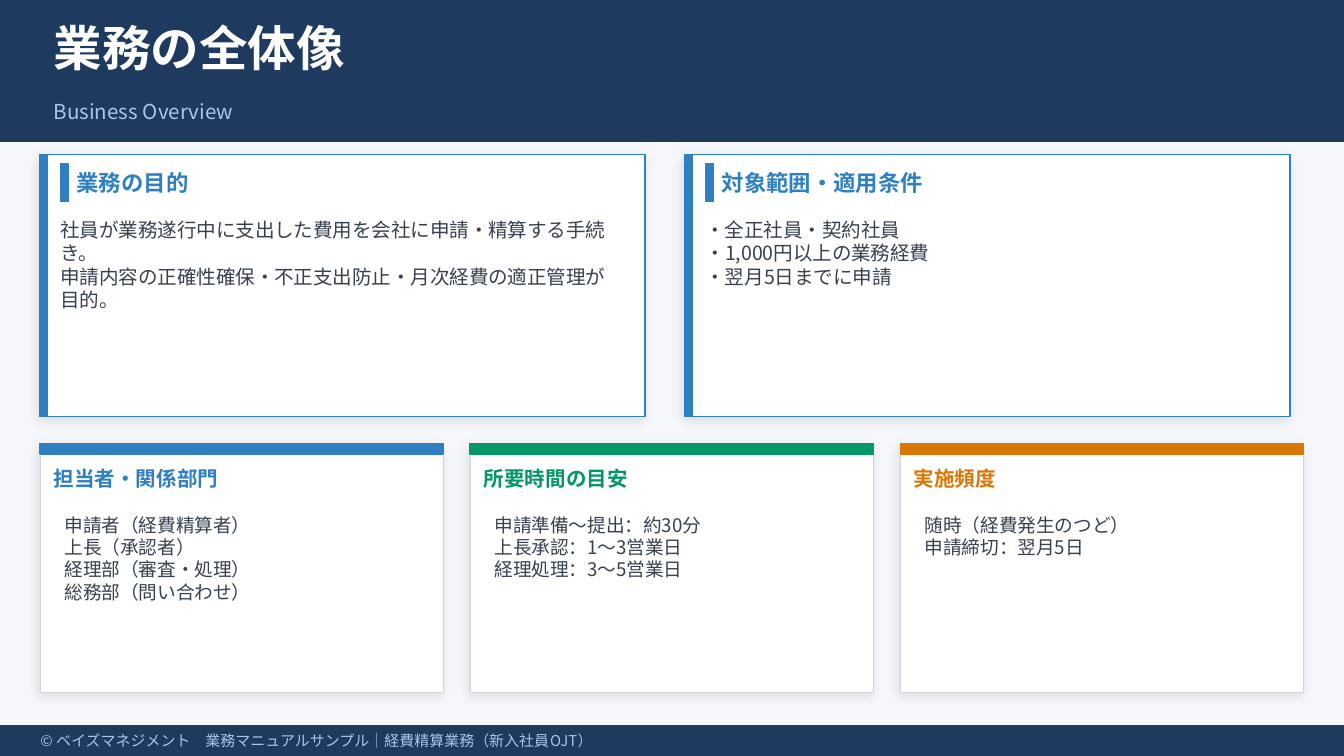
from dataclasses import dataclass

from lxml import etree
from pptx import Presentation
from pptx.dml.color import RGBColor
from pptx.enum.shapes import MSO_SHAPE
from pptx.enum.text import MSO_ANCHOR, MSO_AUTO_SIZE, PP_ALIGN
from pptx.oxml.ns import qn
from pptx.util import Inches, Pt

RECTANGLE = MSO_SHAPE.RECTANGLE
TOP, MIDDLE = MSO_ANCHOR.TOP, MSO_ANCHOR.MIDDLE
LEFT = PP_ALIGN.LEFT
NO_AUTOSIZE = MSO_AUTO_SIZE.NONE
TITLE_ONLY = 5


@dataclass(frozen=True)
class Theme:
    font: str = "Noto Sans CJK JP"
    background: str = "F5F7FA"
    navy: str = "1E3A5F"
    pale_blue: str = "A8C8E8"
    white: str = "FFFFFF"
    blue: str = "2F7FC1"
    green: str = "059669"
    orange: str = "D97706"
    border: str = "D1D5DB"
    body: str = "374151"
    title_size: float = 26
    subtitle_size: float = 11
    panel_heading_size: float = 12
    panel_body_size: float = 10.5
    card_heading_size: float = 11
    card_body_size: float = 10
    footer_size: float = 8


THEME = Theme()

PANELS = [
    ("業務の目的", [
        "社員が業務遂行中に支出した費用を会社に申請・精算する手続き。",
        "申請内容の正確性確保・不正支出防止・月次経費の適正管理が目的。",
    ]),
    ("対象範囲・適用条件", [
        "・全正社員・契約社員",
        "・1,000円以上の業務経費",
        "・翌月5日までに申請",
    ]),
]
CARDS = [
    ("担当者・関係部門", THEME.blue, [
        "申請者（経費精算者）",
        "上長（承認者）",
        "経理部（審査・処理）",
        "総務部（問い合わせ）",
    ]),
    ("所要時間の目安", THEME.green, [
        "申請準備〜提出：約30分",
        "上長承認：1〜3営業日",
        "経理処理：3〜5営業日",
    ]),
    ("実施頻度", THEME.orange, [
        "随時（経費発生のつど）",
        "申請締切：翌月5日",
    ]),
]


def add_block(page, box, fill, line=None, line_width=1):
    block = page.shapes.add_shape(RECTANGLE, *map(Inches, box))
    block.shadow.inherit = False
    block.fill.solid()
    block.fill.fore_color.rgb = RGBColor.from_string(fill)
    block.line.color.rgb = RGBColor.from_string(line or fill)
    block.line.width = Pt(line_width)
    return block


def add_soft_shadow(block):
    effects = block._element.spPr.find(qn("a:effectLst"))
    shadow = etree.SubElement(effects, qn("a:outerShdw"), {
        "blurRad": str(Pt(6)), "dist": str(Pt(2)), "dir": str(135 * 60000),
        "algn": "bl", "rotWithShape": "0"})
    color = etree.SubElement(shadow, qn("a:srgbClr"), val="000000")
    etree.SubElement(color, qn("a:alpha"), val="10000")


def write_text(shape, lines, size, color, bold=False, anchor=MIDDLE,
               left_inset=0, top_inset=0):
    frame = shape.text_frame
    settings = {
        "word_wrap": True, "auto_size": NO_AUTOSIZE, "vertical_anchor": anchor,
        "margin_left": Inches(left_inset), "margin_top": Inches(top_inset),
        "margin_right": 0, "margin_bottom": 0,
    }
    for name, value in settings.items():
        setattr(frame, name, value)
    for index, line in enumerate(lines):
        para = frame.add_paragraph() if index else frame.paragraphs[0]
        para.alignment = LEFT
        span = para.add_run()
        span.text = line
        for name, value in {"name": THEME.font, "size": Pt(size), "bold": bold}.items():
            setattr(span.font, name, value)
        span.font.color.rgb = RGBColor.from_string(color)
        # Japanese glyphs take their typeface from the East Asian slot
        etree.SubElement(span._r.get_or_add_rPr(), qn("a:ea"), typeface=THEME.font)


def add_text(page, box, lines, size, color, **options):
    write_text(page.shapes.add_textbox(*map(Inches, box)), lines, size, color, **options)


def add_header(page, box):
    left, top, width, height = box
    add_block(page, box, THEME.navy)
    title = page.shapes.title
    page.shapes._spTree.append(title._element)  # bring above the band
    place = {"left": left + 0.4, "top": top + 0.05, "width": width - 2, "height": 0.6}
    for name, value in place.items():
        setattr(title, name, Inches(value))
    write_text(title, ["業務の全体像"], THEME.title_size, THEME.white, bold=True)
    add_text(page, (left + 0.4, top + 0.65, width - 2, 0.35), ["Business Overview"],
             THEME.subtitle_size, THEME.pale_blue)


def add_footer(page, box):
    left, top, width, height = box
    add_block(page, box, THEME.navy)
    add_text(page, (left + 0.3, top + 0.01, width - 0.6, 0.2),
             ["© ベイズマネジメント　業務マニュアルサンプル｜経費精算業務（新入社員OJT）"],
             THEME.footer_size, THEME.pale_blue)


def add_panel(page, box, heading, lines):
    """White panel with a blue left edge and a marker beside its heading."""
    left, top, width, height = box
    add_soft_shadow(add_block(page, box, THEME.white, THEME.blue))
    add_block(page, (left, top, 0.05, height), THEME.blue)
    add_block(page, (left + 0.15, top + 0.07, 0.06, 0.28), THEME.blue)
    add_text(page, (left + 0.27, top + 0.07, width - 0.4, 0.28), [heading],
             THEME.panel_heading_size, THEME.blue, bold=True)
    add_text(page, (left + 0.15, top + 0.41, width - 0.4, height - 0.6), lines,
             THEME.panel_body_size, THEME.body, anchor=TOP, top_inset=0.06)


def add_card(page, box, heading, accent, lines):
    """White card with a coloured strip along its top."""
    left, top, width, height = box
    add_soft_shadow(add_block(page, box, THEME.white, THEME.border, 0.5))
    add_block(page, (left, top, width, 0.08), accent)
    add_text(page, (left + 0.1, top + 0.12, width - 0.2, 0.28), [heading],
             THEME.card_heading_size, accent, bold=True)
    add_text(page, (left + 0.15, top + 0.46, width - 0.3, height - 0.57), lines,
             THEME.card_body_size, THEME.body, anchor=TOP, left_inset=0.03, top_inset=0.06)


def build_overview(deck):
    page = deck.slides.add_slide(deck.slide_layouts[TITLE_ONLY])
    page.background.fill.solid()
    page.background.fill.fore_color.rgb = RGBColor.from_string(THEME.background)
    add_header(page, (0, 0, 10, 1.05))
    add_footer(page, (0, 5.4, 10, 0.23))
    margin, panel_width, panel_gap = 0.3, 4.5, 0.3
    for index, panel in enumerate(PANELS):
        left = margin + index * (panel_width + panel_gap)
        add_panel(page, (left, 1.15, panel_width, 1.95), *panel)
    card_width, card_gap = 3, 0.2
    for index, card in enumerate(CARDS):
        left = margin + index * (card_width + card_gap)
        add_card(page, (left, 3.3, card_width, 1.85), *card)


def main():
    deck = Presentation()
    deck.slide_width = Inches(10)
    deck.slide_height = Inches(10 * 9 / 16)
    build_overview(deck)
    deck.save("out.pptx")


if __name__ == "__main__":
    main()
